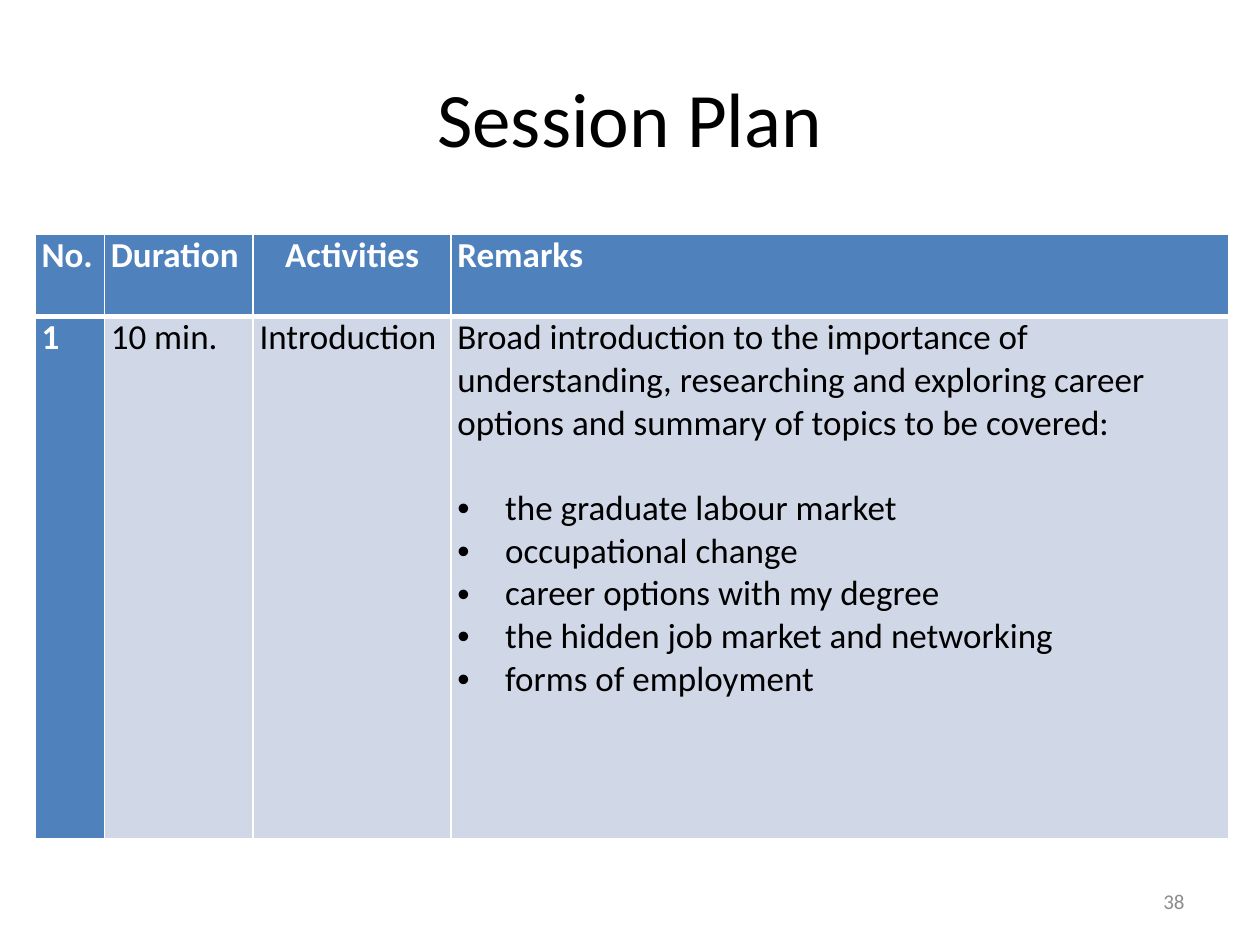
from lxml import etree
from pptx import Presentation
from pptx.dml.color import RGBColor
from pptx.enum.text import MSO_ANCHOR, PP_ALIGN
from pptx.oxml.ns import qn
from pptx.util import Emu, Pt

PX = 9144
BLACK = RGBColor(0x00, 0x00, 0x00)
WHITE = RGBColor(0xFF, 0xFF, 0xFF)
GRAY = RGBColor(0x8C, 0x8C, 0x8C)
BLUE = RGBColor(0x4F, 0x81, 0xBD)
PALE_BLUE = RGBColor(0xD0, 0xD8, 0xE8)


def write_paragraph(paragraph, text, alignment, font_format):
    paragraph.alignment = alignment
    run = paragraph.add_run()
    run.text = text
    run.font.name = "Calibri"
    run.font.color.rgb = font_format["color"]
    for name in ("size", "bold"):
        setattr(run.font, name, font_format[name])


def add_border(cell, side, points):
    line = etree.SubElement(cell._tc.get_or_add_tcPr(), qn(f"a:ln{side}"), w=str(Pt(points)))
    fill = etree.SubElement(line, qn("a:solidFill"))
    etree.SubElement(fill, qn("a:srgbClr"), val=str(WHITE))


presentation = Presentation()
presentation.slide_width = Emu(1000 * PX)
presentation.slide_height = Emu(750 * PX)
slide = presentation.slides.add_slide(presentation.slide_layouts[6])

text_boxes = [
    ("Session Plan", (50, 30, 900, 125), PP_ALIGN.CENTER, {"size": Pt(44), "bold": False, "color": BLACK}),
    ("38", (717, 695, 233, 40), PP_ALIGN.RIGHT, {"size": Pt(12), "bold": False, "color": GRAY}),
]
for text, box, alignment, font_format in text_boxes:
    shape = slide.shapes.add_textbox(*(Emu(length * PX) for length in box))
    frame_format = {"word_wrap": True, "vertical_anchor": MSO_ANCHOR.MIDDLE}
    for name, value in frame_format.items():
        setattr(shape.text_frame, name, value)
    write_paragraph(shape.text_frame.paragraphs[0], text, alignment, font_format)

column_widths = [55, 118, 157, 617]
row_heights = [65, 415]
table_box = (28, 186, sum(column_widths), sum(row_heights))
table = slide.shapes.add_table(2, 4, *(Emu(length * PX) for length in table_box)).table
for column, width in zip(table.columns, column_widths):
    column.width = Emu(width * PX)
for row, height in zip(table.rows, row_heights):
    row.height = Emu(height * PX)

introduction = (
    "Broad introduction to the importance of understanding, researching and exploring career "
    "options and summary of topics to be covered:"
)
topics = [
    "the graduate labour market",
    "occupational change",
    "career options with my degree",
    "the hidden job market and networking",
    "forms of employment",
]
table_rows = [
    ["No.", "Duration", "Activities", "Remarks"],
    ["1", "10 min.", "Introduction", introduction],
]
alignments = {(0, 2): PP_ALIGN.CENTER, (1, 2): PP_ALIGN.JUSTIFY}
heading_font = {"size": Pt(20), "bold": True, "color": WHITE}
body_font = {"size": Pt(20), "bold": False, "color": BLACK}
cell_format = {
    "margin_left": Emu(5 * PX),
    "margin_right": Emu(5 * PX),
    "margin_top": 0,
    "margin_bottom": 0,
    "vertical_anchor": MSO_ANCHOR.TOP,
}
for row_index, row_texts in enumerate(table_rows):
    for column_index, text in enumerate(row_texts):
        cell = table.cell(row_index, column_index)
        is_heading = row_index == 0 or column_index == 0
        for name, value in cell_format.items():
            setattr(cell, name, value)
        borders = {"L": 1, "R": 1, "T": 3 if row_index == 1 else 1, "B": 3 if row_index == 0 else 1}
        for side, points in borders.items():
            add_border(cell, side, points)
        cell.fill.solid()
        cell.fill.fore_color.rgb = BLUE if is_heading else PALE_BLUE
        alignment = alignments.get((row_index, column_index), PP_ALIGN.LEFT)
        write_paragraph(cell.text_frame.paragraphs[0], text, alignment, heading_font if is_heading else body_font)

remarks = table.cell(1, 3).text_frame
for topic in topics:
    paragraph = remarks.add_paragraph()
    alignment = PP_ALIGN.JUSTIFY if topic == topics[-1] else PP_ALIGN.LEFT
    write_paragraph(paragraph, topic, alignment, body_font)
    if topic == topics[0]:
        paragraph.space_before = Pt(24)
    properties = paragraph._p.get_or_add_pPr()
    properties.set("marL", str(38 * PX))
    properties.set("indent", str(-38 * PX))
    etree.SubElement(properties, qn("a:buFont"), typeface="Arial")
    etree.SubElement(properties, qn("a:buChar"), char="•")

presentation.save("out.pptx")
